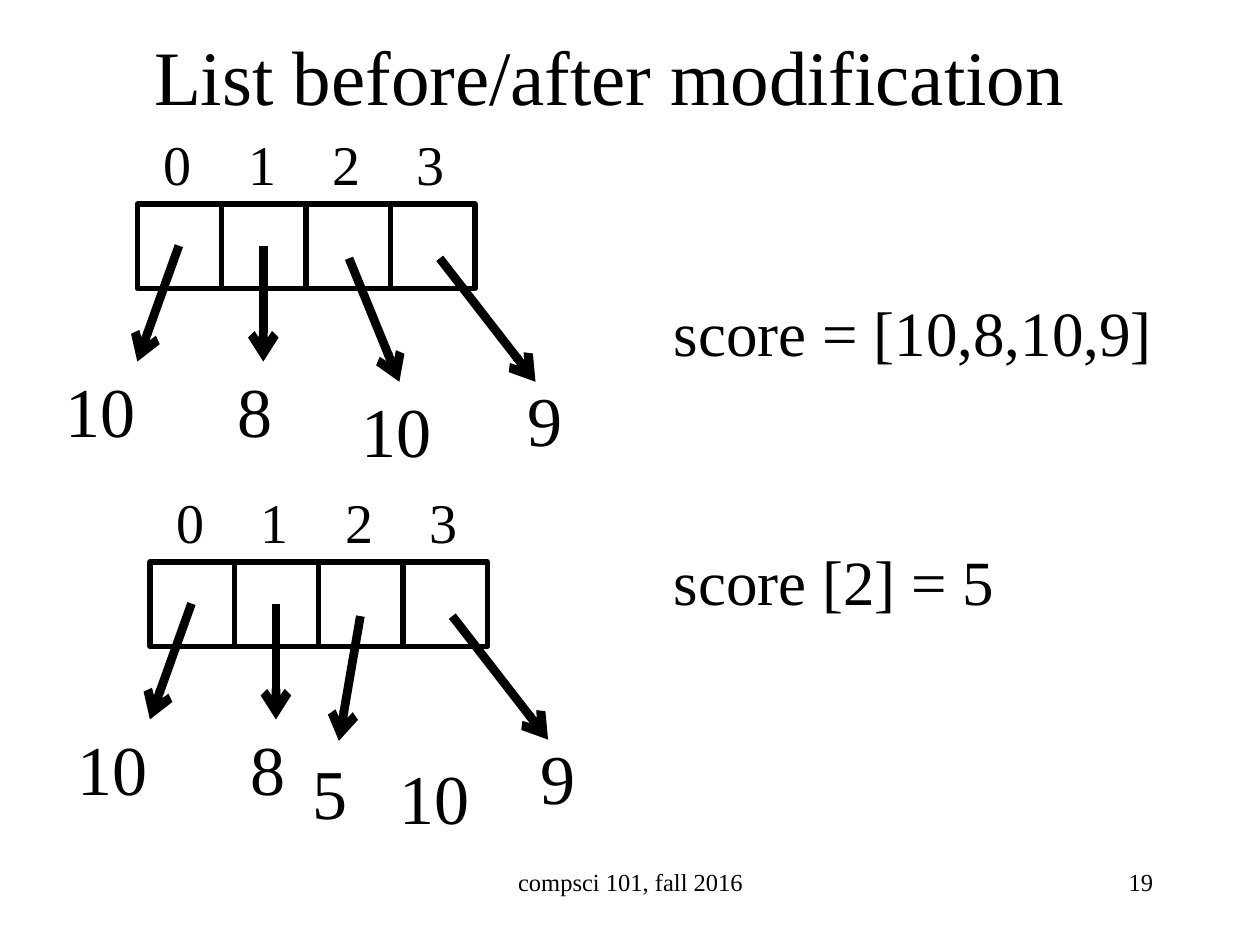
from lxml import etree
from pptx import Presentation
from pptx.dml.color import RGBColor
from pptx.enum.shapes import MSO_CONNECTOR as Connector, MSO_SHAPE as Shape
from pptx.enum.text import MSO_ANCHOR as Anchor, PP_ALIGN as Align
from pptx.oxml.ns import qn
from pptx.util import Inches, Pt

COLORS = {"ink": "000000", "background": "FFFFFF"}
FONT = "Times New Roman"
CELL = 0.67
CELL_COUNT = 4
POINTERS = [
    ((0.33, 0.33), (0, 1.25)),
    ((1, 0.33), (1, 1.25)),
    ((1.68, 0.43), (2.08, 1.41)),
    ((2.4, 0.43), (3.16, 1.41)),
]
VALUES = [
    ("10", -0.67, 1.25),
    ("8", 0.7, 1.25),
    ("10", 1.68, 1.41),
    ("9", 3, 1.32),
]


def color(name):
    return RGBColor.from_string(COLORS[name])


def add_text(slide, text, left, top, width, height, size, align=Align.LEFT, anchor=Anchor.TOP):
    box = slide.shapes.add_textbox(Inches(left), Inches(top), Inches(width), Inches(height))
    frame = box.text_frame
    frame.word_wrap = True
    frame.vertical_anchor = anchor
    paragraph = frame.paragraphs[0]
    paragraph.text = text
    paragraph.alignment = align
    paragraph.font.name = FONT
    paragraph.font.size = Pt(size)
    paragraph.font.color.rgb = color("ink")
    return paragraph


def add_indices(slide, left, top):
    text = "\t".join(str(index) for index in range(CELL_COUNT))
    paragraph = add_text(slide, text, left, top, 2.45, 0.64, 32)
    tabs = etree.Element(qn("a:tabLst"))
    for index in range(1, CELL_COUNT):
        etree.SubElement(tabs, qn("a:tab"), pos=str(Inches(index * CELL)), algn="l")
    paragraph._p.get_or_add_pPr().insert(0, tabs)


def add_cell(slide, left, top):
    cell = slide.shapes.add_shape(
        Shape.RECTANGLE, Inches(left), Inches(top), Inches(CELL), Inches(CELL)
    )
    cell.shadow.inherit = False
    cell.fill.background()
    cell.line.color.rgb = color("ink")
    cell.line.width = Pt(3)


def add_arrow(slide, start_x, start_y, end_x, end_y):
    arrow = slide.shapes.add_connector(
        Connector.STRAIGHT, Inches(start_x), Inches(start_y), Inches(end_x), Inches(end_y)
    )
    arrow.line.color.rgb = color("ink")
    arrow.line.width = Pt(5)
    etree.SubElement(arrow.line._get_or_add_ln(), qn("a:tailEnd"), type="arrow")
    etree.SubElement(arrow._element.spPr, qn("a:effectLst"))


def add_list_diagram(slide, left, top, pointers, values):
    for index in range(CELL_COUNT):
        add_cell(slide, left + index * CELL, top)
    add_indices(slide, left + 0.11, top - 0.64)
    for (start_x, start_y), (end_x, end_y) in pointers:
        add_arrow(slide, left + start_x, top + start_y, left + end_x, top + end_y)
    for text, x, y in values:
        width = 0.79 if len(text) > 1 else 0.58
        add_text(slide, text, left + x, top + y, width, 0.77, 40)


def add_statements(slide, left, width):
    for text, top in (("score = [10,8,10,9]", 2.28), ("score [2] = 5", 4.26)):
        add_text(slide, text, left, top, width, 0.71, 36)


def add_footer(slide, top, height):
    add_text(slide, "compsci 101, fall 2016", 3.42, top, 3.17, height, 14, Align.CENTER)
    add_text(slide, "19", 7.17, top, 2.08, height, 14, Align.RIGHT)


def main():
    presentation = Presentation()
    presentation.slide_width = Inches(10)
    presentation.slide_height = Inches(7.5)
    slide = presentation.slides.add_slide(presentation.slide_layouts[6])
    slide.background.fill.solid()
    slide.background.fill.fore_color.rgb = color("background")

    add_text(slide, "List before/after modification", 0.59, 0.23, 8.5, 0.73, 44,
             Align.CENTER, Anchor.MIDDLE)
    add_statements(slide, 5.25, 4.17)
    add_list_diagram(slide, 1.09, 1.62, POINTERS, VALUES)

    changed_pointers = POINTERS[:2] + [((1.67, 0.43), (1.5, 1.42))] + POINTERS[3:]
    changed_values = VALUES[:2] + [("5", 1.19, 1.44), ("10", 1.88, 1.48)] + VALUES[3:]
    add_list_diagram(slide, 1.19, 4.46, changed_pointers, changed_values)
    add_footer(slide, 6.83, 0.5)
    presentation.save("out.pptx")


if __name__ == "__main__":
    main()
